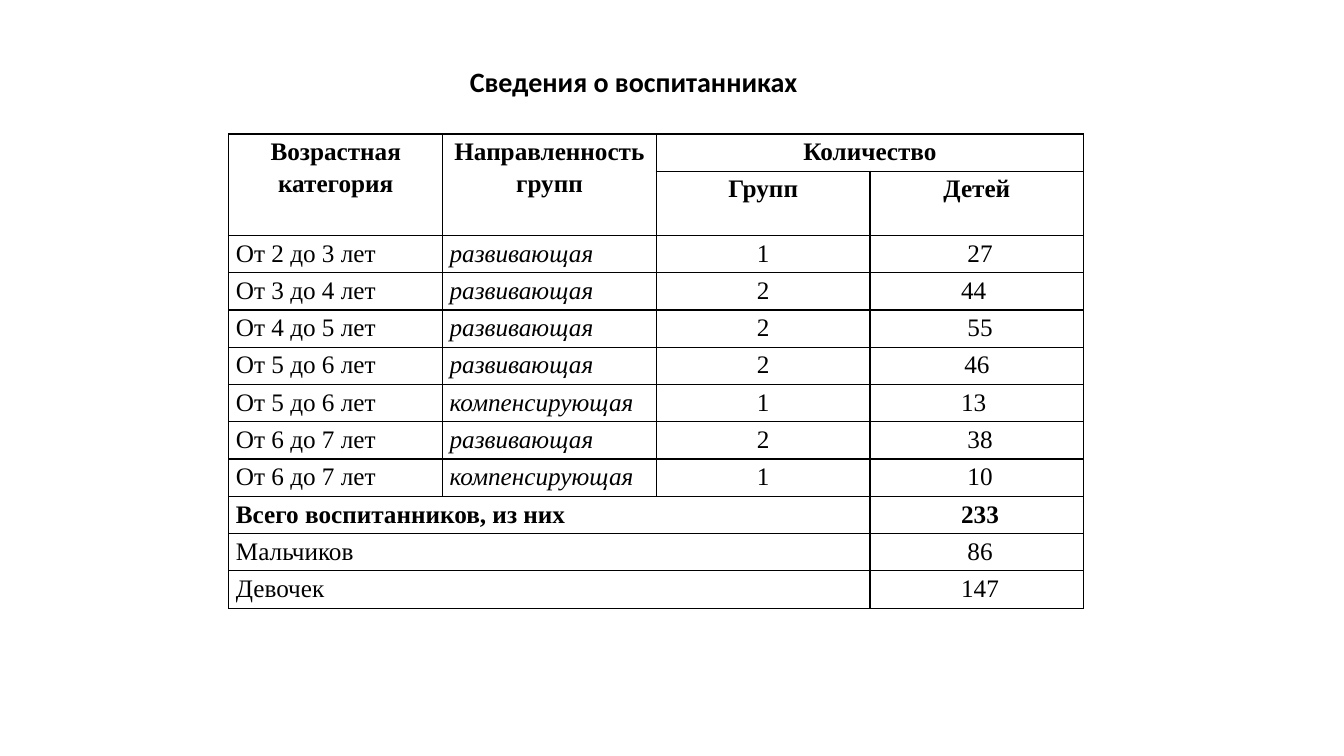
from lxml import etree
from pptx import Presentation
from pptx import util as u
from pptx.dml.color import RGBColor
from pptx.enum import text
from pptx.oxml.ns import qn

CENTER, JUSTIFY = text.PP_ALIGN.CENTER, text.PP_ALIGN.JUSTIFY
TITLE = "Сведения о воспитанниках"
HEADERS = [
    ["Возрастная категория", "Направленность групп", "Количество", ""],
    ["", "", "Групп", "Детей"],
]
GROUPS = [
    ["От 2 до 3 лет", "развивающая", "1", " 27"],
    ["От 3 до 4 лет", "развивающая", "2", "44 "],
    ["От 4 до 5 лет", "развивающая", "2", " 55"],
    ["От 5 до 6 лет", "развивающая", "2", "46"],
    ["От 5 до 6 лет", "компенсирующая", "1", "13 "],
    ["От 6 до 7 лет", "развивающая", "2", " 38"],
    ["От 6 до 7 лет", "компенсирующая", "1", " 10"],
]
TOTALS = [
    ["Всего воспитанников, из них", "", "", " 233"],
    ["Мальчиков", "", "", " 86"],
    ["Девочек", "", "", " 147"],
]


def px(length):
    return u.Emu(length * 9144)


def color(value):
    return RGBColor.from_string(value)


class Page:
    """Draws styled elements on one blank slide."""

    ink = "000000"
    title_font = "Calibri"
    table_font = "Times New Roman"

    def __init__(self, deck):
        self.slide = deck.slides.add_slide(deck.slide_layouts[6])

    def style(self, para, font, size, bold=False, italic=False, align=CENTER):
        para.alignment = align
        for span in para.runs:
            span.font.name = font
            span.font.size = u.Pt(size)
            span.font.bold = bold
            span.font.italic = italic
            span.font.color.rgb = color(self.ink)

    def title(self, words, left, top, width, height):
        box = self.slide.shapes.add_textbox(px(left), px(top), px(width), px(height))
        box.text_frame.word_wrap = True
        box.text_frame.text = words
        self.style(box.text_frame.paragraphs[0], self.title_font, 20, bold=True)

    def border(self, cell):
        properties = cell._tc.get_or_add_tcPr()
        for index, side in enumerate(("lnL", "lnR", "lnT", "lnB")):
            line = etree.Element(qn(f"a:{side}"), w=str(u.Pt(1)))
            fill = etree.SubElement(line, qn("a:solidFill"))
            etree.SubElement(fill, qn("a:srgbClr"), val=self.ink)
            properties.insert(index, line)

    def cell(self, cell, words, **look):
        cell.margin_left = cell.margin_right = px(7)
        cell.margin_top = cell.margin_bottom = 0
        cell.fill.background()
        self.border(cell)
        cell.text_frame.text = words
        para = cell.text_frame.paragraphs[0]
        para.line_spacing = 1.15
        self.style(para, self.table_font, 18, **look)

    def table(self, rows, left, top, column, row_height, merges):
        columns = len(rows[0])
        frame = self.slide.shapes.add_table(
            len(rows), columns, px(left), px(top),
            px(column * columns), px(row_height * len(rows)))
        table = frame.table
        table.first_row = table.horz_banding = False
        for row in table.rows:
            row.height = px(row_height)
        for start, end in merges:
            table.cell(*start).merge(table.cell(*end))
        first_total = len(HEADERS) + len(GROUPS)
        for r, row in enumerate(rows):
            header = r < len(HEADERS)
            for c, words in enumerate(row):
                self.cell(
                    table.cell(r, c), words,
                    bold=header or r == first_total,
                    italic=c == 1 and not header,
                    align=CENTER if header or c > 1 else JUSTIFY)


def main():
    deck = Presentation()
    deck.slide_width, deck.slide_height = px(1333), px(750)
    page = Page(deck)
    rows = HEADERS + GROUPS + TOTALS
    merges = [((0, 0), (1, 0)), ((0, 1), (1, 1)), ((0, 2), (0, 3))]
    merges += [((r, 0), (r, 2)) for r in range(len(rows) - len(TOTALS), len(rows))]
    page.table(rows, 227, 133, 212, 37, merges)
    page.title(TITLE, 303, 59, 651, 74)
    deck.save("out.pptx")


if __name__ == "__main__":
    main()
